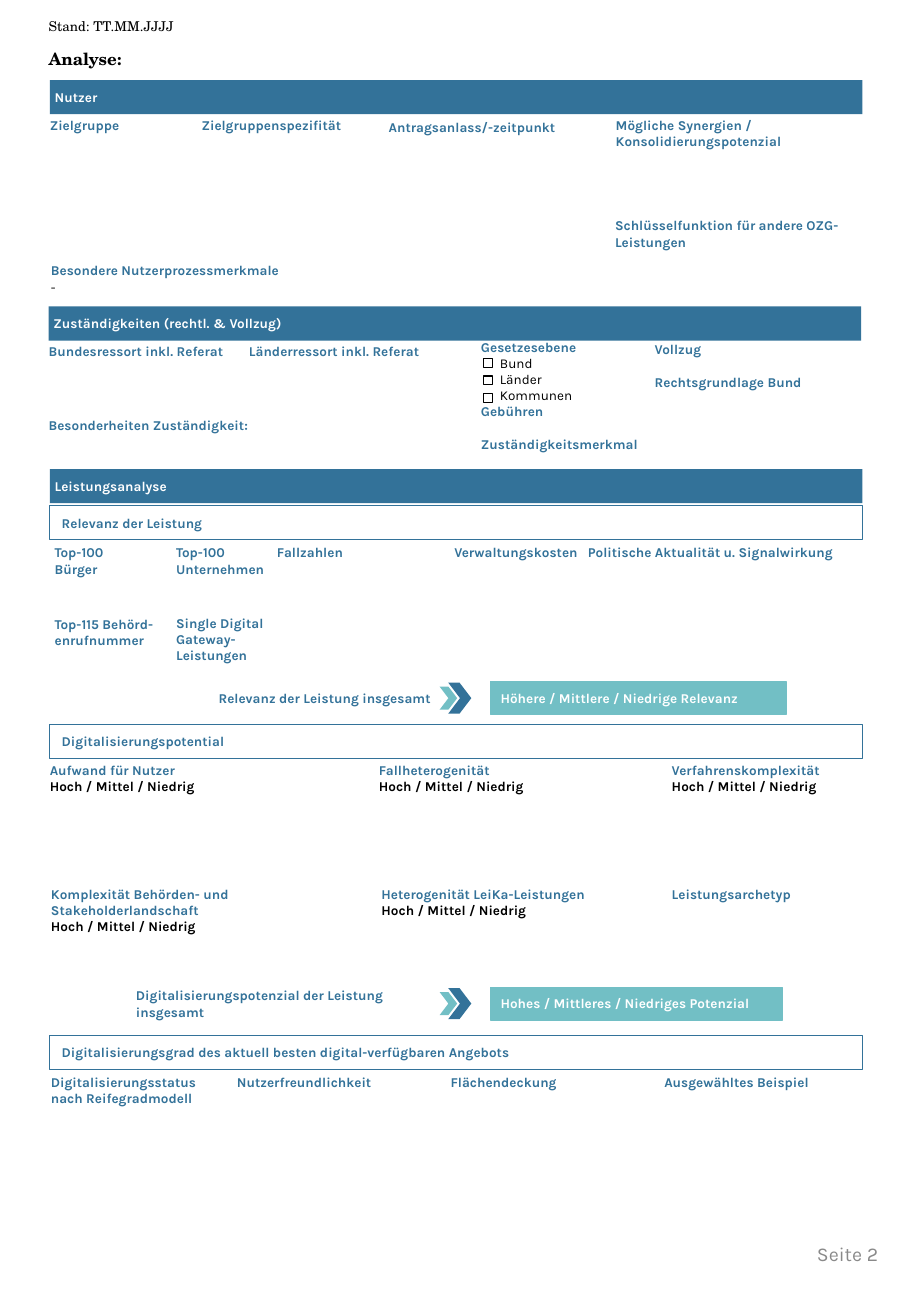
from copy import deepcopy

from pptx import Presentation
from pptx.dml.color import RGBColor
from pptx.enum.shapes import MSO_SHAPE
from pptx.enum.text import MSO_ANCHOR, PP_ALIGN
from pptx.oxml.ns import qn
from pptx.util import Pt

RECTANGLE = MSO_SHAPE.RECTANGLE
TOP, MIDDLE = MSO_ANCHOR.TOP, MSO_ANCHOR.MIDDLE
LEFT, RIGHT = PP_ALIGN.LEFT, PP_ALIGN.RIGHT

BLUE, TEAL, WHITE, BLACK, GREY = "337299", "72BFC5", "FFFFFF", "000000", "898989"
LABEL = {"size": Pt(8), "name": "Karla", "bold": True}
PLAIN = {**LABEL, "bold": False}
STAMP = {**PLAIN, "name": "TeX Gyre Schola"}
TITLE = {"size": Pt(10), "name": "TeX Gyre Schola", "bold": True}
PAGE = {**PLAIN, "size": Pt(11.6)}
RATING = "Hoch / Mittel / Niedrig"
BAR_LEFT, BAR_WIDTH, BAR_HEIGHT = 29.5, 481.7, 20.2

# Section bars and outlined subsection headings: left, top, text
SECTIONS = [
    (BAR_LEFT, 47.5, "Nutzer"),
    (28.8, 181.6, "Zuständigkeiten (rechtl. & Vollzug)"),
    (BAR_LEFT, 278, "Leistungsanalyse"),
]
SUBSECTIONS = [
    (299.6, "Relevanz der Leistung"),
    (429.2, "Digitalisierungspotential"),
    (613.6, "Digitalisierungsgrad des aktuell besten digital-verfügbaren Angebots"),
]

# Field labels: left, top, width, height, text
FIELDS = [
    (29.5, 69.1, 87.8, 19.4, "Zielgruppe"),
    (119.5, 69.1, 105.1, 28.8, "Zielgruppenspezifität"),
    (230.4, 70.6, 124.6, 28.8, "Antragsanlass/-zeitpunkt"),
    (365, 69.1, 146.2, 19.4, "Mögliche Synergien / Konsolidierungspotenzial"),
    (364.6, 128.9, 146.9, 43.2, "Schlüsselfunktion für andere OZG-Leistungen"),
    (28.8, 203, 111.6, 30.2, "Bundesressort inkl. Referat"),
    (147.6, 203, 141.1, 59.8, "Länderressort inkl. Referat"),
    (388.1, 202.3, 104.4, 26.6, "Vollzug"),
    (388.1, 221.8, 122.4, 51.1, "Rechtsgrundlage Bund"),
    (28.8, 247, 263.5, 19.4, "Besonderheiten Zuständigkeit:"),
    (285.1, 239, 45.4, 32.4, "Gebühren"),
    (285.1, 258.5, 104.4, 28.8, "Zuständigkeitsmerkmal"),
    (32.4, 322.6, 40.3, 19.4, "Top-100\vBürger"),
    (104.4, 322.6, 92.2, 19.4, "Top-100\vUnternehmen"),
    (164.2, 322.6, 105.1, 9.4, "Fallzahlen"),
    (269.3, 322.6, 79.2, 9.4, "Verwaltungskosten"),
    (348.5, 322.6, 191.5, 9.4, "Politische Aktualität u. Signalwirkung"),
    (32.4, 365, 61.9, 19.4, "Top-115 Behörd-enrufnummer"),
    (104.4, 364.3, 95.8, 28.8, "Single Digital\vGateway-\vLeistungen"),
    (398.2, 524.9, 119.5, 9.4, "Leistungsarchetyp"),
    (30.2, 636.5, 103.7, 19.4, "Digitalisierungsstatus nach Reifegradmodell"),
    (140.4, 636.5, 104.4, 9.4, "Nutzerfreundlichkeit"),
    (267.1, 636.5, 119.5, 9.4, "Flächendeckung"),
    (393.8, 636.5, 117.4, 9.4, "Ausgewähltes Beispiel"),
]
RATED_FIELDS = [
    (29.5, 451.4, 187.9, 19.4, "Aufwand für Nutzer"),
    (224.6, 451.4, 162, 19.4, "Fallheterogenität"),
    (398.2, 451.4, 113, 19.4, "Verfahrenskomplexität"),
    (30.2, 524.9, 180.7, 28.8, "Komplexität Behörden- und Stakeholderlandschaft"),
    (226.1, 524.9, 133.2, 19.4, "Heterogenität LeiKa-Leistungen"),
]

# Overall results: centre, label left, label width, label, result width, result
RESULTS = [
    (413.7, 129.6, 127.4, "Relevanz der Leistung insgesamt",
     175, "Höhere / Mittlere / Niedrige Relevanz"),
    (594.7, 80.6, 176.4, "Digitalisierungspotenzial der Leistung insgesamt",
     172.8, "Hohes / Mittleres / Niedriges Potenzial"),
]


def colour(value):
    return RGBColor.from_string(value)


def write(paragraph, text, text_colour, text_format, align=LEFT):
    paragraph.text = text
    paragraph.alignment = align
    for run in paragraph.runs:
        for name, value in text_format.items():
            setattr(run.font, name, value)
        run.font.color.rgb = colour(text_colour)
    # Line breaks take the size of the text around them
    for line_break in paragraph._p.findall(qn("a:br")):
        line_break.append(deepcopy(paragraph.runs[0]._r.rPr))


def set_frame(frame, anchor, insets=(0, 0, 0, 0)):
    frame.word_wrap = True
    frame.vertical_anchor = anchor
    for side, inset in zip(("left", "top", "right", "bottom"), insets):
        setattr(frame, f"margin_{side}", Pt(inset))


def add_label(slide, left, top, width, height, text, text_colour=BLUE,
              text_format=LABEL, anchor=TOP, align=LEFT):
    box = slide.shapes.add_textbox(Pt(left), Pt(top), Pt(width), Pt(height))
    set_frame(box.text_frame, anchor)
    write(box.text_frame.paragraphs[0], text, text_colour, text_format, align)
    return box.text_frame


def add_entry(frame, text, text_format, indent=0):
    paragraph = frame.add_paragraph()
    write(paragraph, text, BLACK, text_format)
    paragraph._p.get_or_add_pPr().set("marL", str(Pt(indent)))


def paint(shape, fill=None, line=None):
    shape.shadow.inherit = False
    if fill:
        shape.fill.solid()
        shape.fill.fore_color.rgb = colour(fill)
    else:
        shape.fill.background()
    if line:
        shape.line.color.rgb = colour(line)
        shape.line.width = Pt(0.75)
    else:
        shape.line.fill.background()


def add_box(slide, left, top, width, height, fill=None, line=None):
    shape = slide.shapes.add_shape(RECTANGLE, Pt(left), Pt(top), Pt(width), Pt(height))
    paint(shape, fill, line)
    return shape


def add_bar(slide, left, top, width, height, text, text_colour, insets,
            fill=None, line=None):
    frame = add_box(slide, left, top, width, height, fill, line).text_frame
    set_frame(frame, MIDDLE, insets)
    write(frame.paragraphs[0], text, text_colour, LABEL)


def add_chevron(slide, left, centre, width, height, depth, fill):
    right, top, bottom = left + width, centre - height / 2, centre + height / 2
    outline = [(left, top), (right - depth, top), (right, centre),
               (right - depth, bottom), (left, bottom), (left + depth, centre)]
    points = [(Pt(x), Pt(y)) for x, y in outline]
    builder = slide.shapes.build_freeform(*points[0])
    builder.add_line_segments(points[1:], close=True)
    paint(builder.convert_to_shape(), fill)


def add_result(slide, centre, left, label_width, label, result_width, result):
    add_label(slide, left, centre - 9.7, label_width, 19.4, label, anchor=MIDDLE)
    add_chevron(slide, 260.6, centre, 10.4, 13.7, 5.2, TEAL)
    add_chevron(slide, 265.7, centre, 13.7, 18.4, 7, BLUE)
    add_bar(slide, 290.9, centre - 9.7, result_width, 19.4, result, WHITE,
            (5.8, 2.9, 2.9, 2.9), TEAL, TEAL)


def main():
    presentation = Presentation()
    presentation.slide_width, presentation.slide_height = Pt(540), Pt(779.8)
    slide = presentation.slides.add_slide(presentation.slide_layouts[6])

    # Head and page number
    add_label(slide, 28.8, 10.8, 399.6, 9.4, "Stand: TT.MM.JJJJ", BLACK, STAMP)
    add_label(slide, 28.8, 28.8, 399.6, 12.2, "Analyse:", BLACK, TITLE)
    add_label(slide, 470.6, 735.8, 50, 13.7, "Seite 2", GREY, PAGE, MIDDLE, RIGHT)

    # Headings
    for left, top, text in SECTIONS:
        add_bar(slide, left, top, BAR_WIDTH, BAR_HEIGHT, text, WHITE, (2.9,) * 4, BLUE)
    for top, text in SUBSECTIONS:
        add_bar(slide, BAR_LEFT, top, BAR_WIDTH, BAR_HEIGHT, text, BLUE,
                (7.2, 0, 0, 0), line=BLUE)

    # Fields
    for field in FIELDS:
        add_label(slide, *field)
    for field in RATED_FIELDS:
        add_entry(add_label(slide, *field), RATING, LABEL)
    features = add_label(slide, 30.2, 155.5, 481, 21.6, "Besondere Nutzerprozessmerkmale")
    add_entry(features, "-", PLAIN)

    # Level of law with check boxes
    levels = add_label(slide, 285.1, 200.9, 94.3, 38.4, "Gesetzesebene")
    for index, level in enumerate(("Bund", "Länder", "Kommunen")):
        add_entry(levels, level, PLAIN, indent=11.2)
        add_box(slide, 286.6, 212.4 + 10.4 * index, 5.2, 5.2, line=BLACK)

    # Overall results
    for result in RESULTS:
        add_result(slide, *result)

    presentation.save("out.pptx")


if __name__ == "__main__":
    main()
